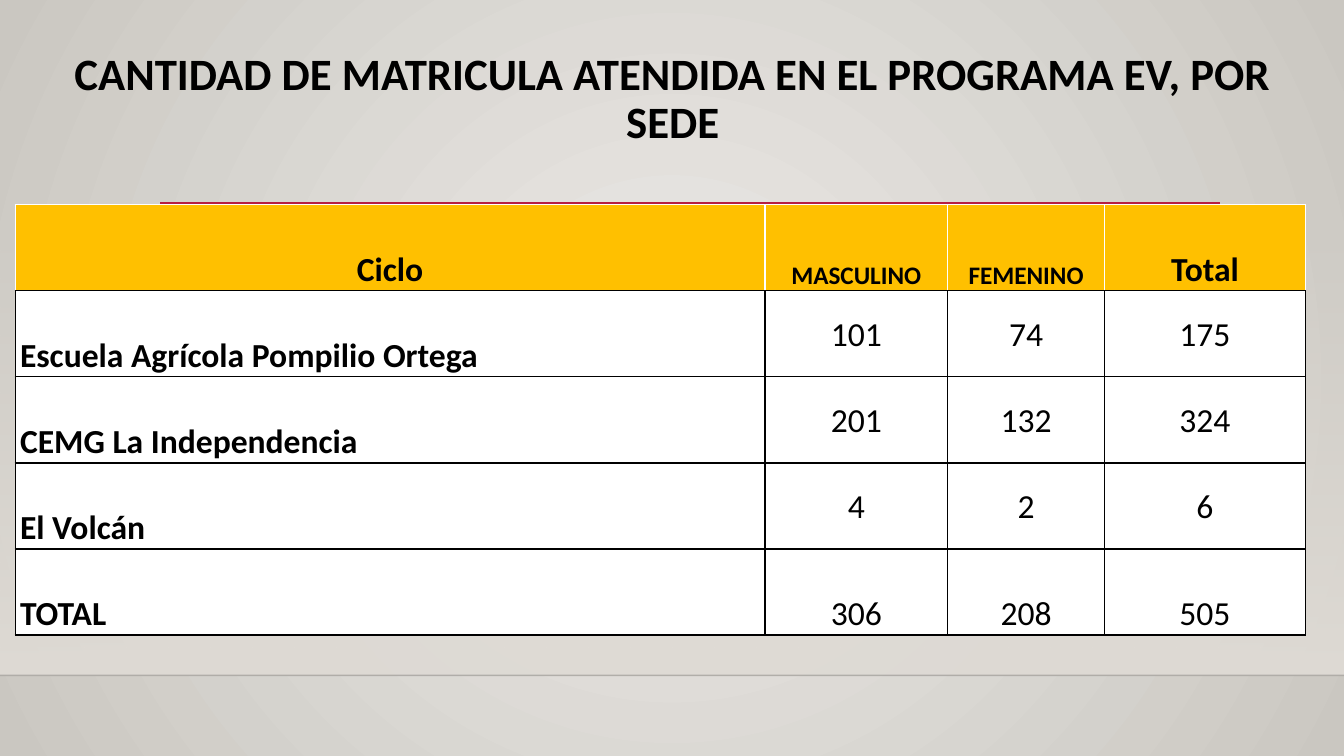
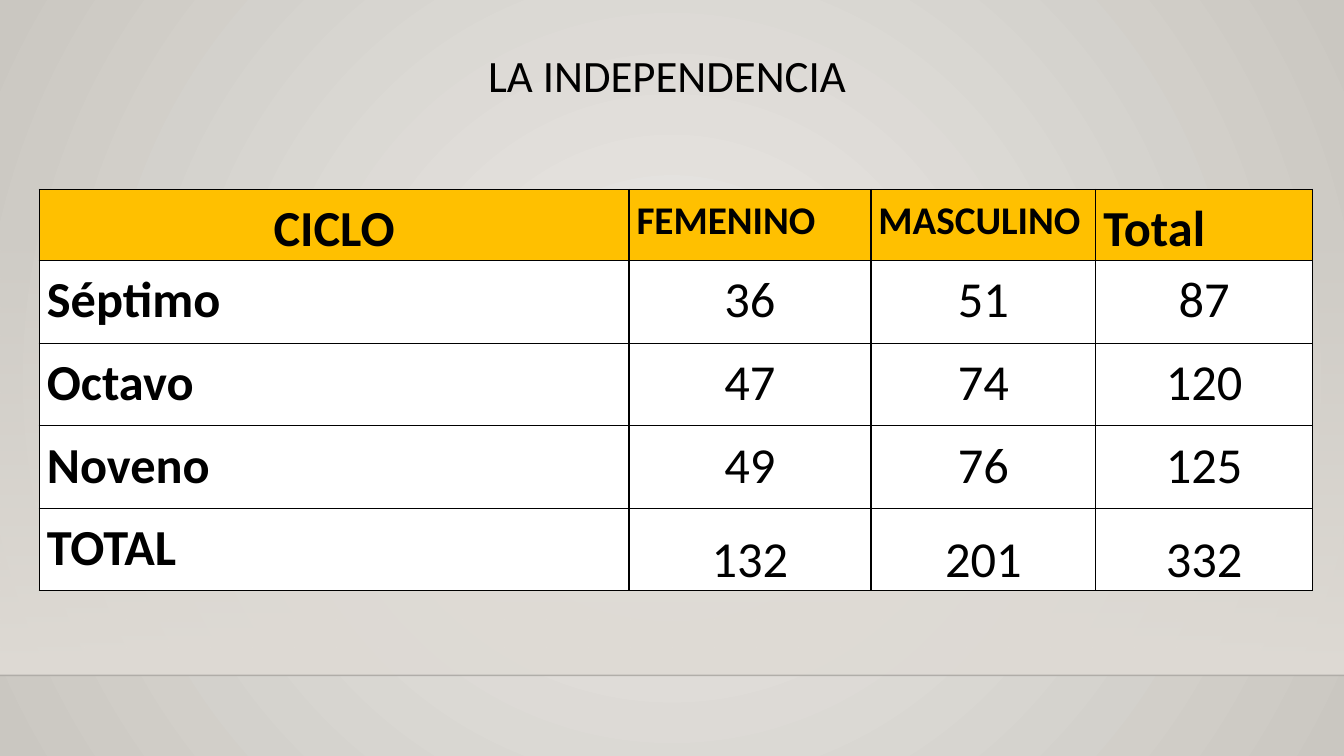
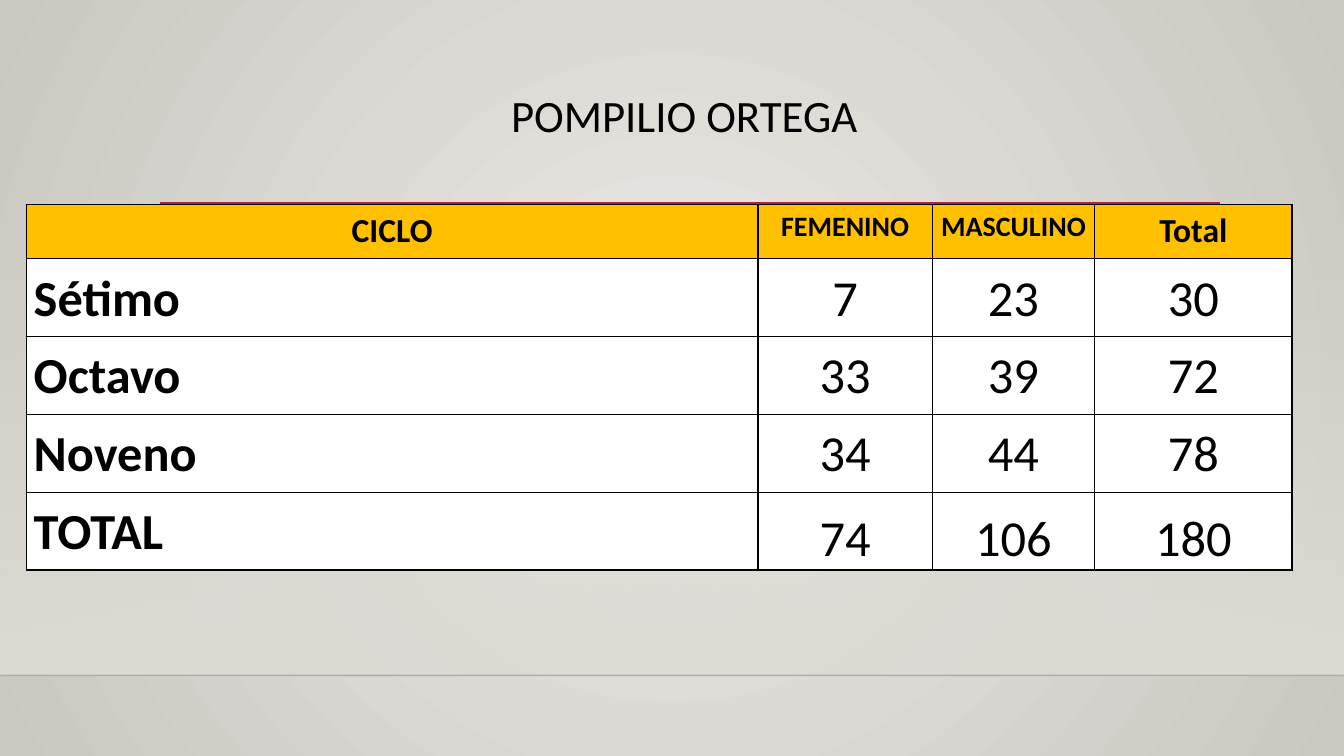
from lxml.etree import SubElement
from pptx import Presentation
from pptx.dml.color import RGBColor
from pptx.enum.shapes import MSO_CONNECTOR, MSO_SHAPE
from pptx.enum.text import MSO_ANCHOR, MSO_AUTO_SIZE, PP_ALIGN
from pptx.oxml.ns import qn
from pptx.util import Pt

HUES = {
    "black": "000000",
    "white": "FFFFFF",
    "gold": "FFC000",
    "red": "B71E42",
    "sand": "DFDBD5",
    "light": "ECEAE7",
    "dark": "CAC7C1",
}
WIDE, HIGH = 960, 540
TOP, MID, LOW = MSO_ANCHOR.TOP, MSO_ANCHOR.MIDDLE, MSO_ANCHOR.BOTTOM
LEFT, CENTER = PP_ALIGN.JUSTIFY, PP_ALIGN.CENTER


class Deck:
    font = "Calibri"

    def __init__(self):
        self.show = Presentation()
        self.show.slide_width = Pt(WIDE)
        self.show.slide_height = Pt(HIGH)
        self.plan = self.show.slide_layouts[5]
        self.slide = None
        self.paint_back()

    def hue(self, name):
        return RGBColor.from_string(HUES[name])

    def fade(self, color, share):
        tag = color.find(".//" + qn("a:srgbClr"))
        SubElement(tag, qn("a:alpha"), val=str(share * 1000))

    def blend(self, fill, first, last):
        fill.gradient()
        for stop, name in zip(fill.gradient_stops, (first, last)):
            stop.color.rgb = self.hue(name)

    def paint_back(self):
        master = self.show.slide_master
        self.blend(master.background.fill, "light", "dark")
        angle = master.element.xpath(".//p:bg//a:lin")[0]
        grad = angle.getparent()
        grad.remove(angle)
        ring = SubElement(grad, qn("a:path"), path="circle")
        SubElement(ring, qn("a:fillToRect"), {side: "50000" for side in "ltrb"})

    def add(self):
        fresh = self.slide is None
        self.slide = self.show.slides.add_slide(self.plan)
        if fresh:
            self.dress()

    def dress(self):
        parts = [
            self.band(159, 323.4),
            self.rule(0, WIDE, 482.4, "black", 1, 20),
            self.rule(114.5, 871.2, 145.5, "red", 2.5),
        ]
        tree = self.plan.shapes.element
        for num, part in enumerate(parts, 20):
            part.element.xpath(".//p:cNvPr")[0].set("id", str(num))
            tree.append(part.element)

    def band(self, top, high):
        box = self.slide.shapes.add_shape(
            MSO_SHAPE.RECTANGLE, 0, Pt(top), Pt(WIDE), Pt(high))
        box.shadow.inherit = False
        box.line.fill.background()
        self.blend(box.fill, "sand", "sand")
        box.fill.gradient_angle = 270
        self.fade(box.element.xpath(".//a:gs")[0], 0)
        return box

    def rule(self, start, end, top, name, thick, share=100):
        line = self.slide.shapes.add_connector(
            MSO_CONNECTOR.STRAIGHT, Pt(start), Pt(top), Pt(end), Pt(top))
        line.line.color.rgb = self.hue(name)
        line.line.width = Pt(thick)
        if share < 100:
            self.fade(line.element.spPr, share)
        SubElement(line.element.spPr, qn("a:effectLst"))
        return line

    def style(self, para, size, bold, align, space):
        para.alignment = align
        para.line_spacing = space
        para.font.name = self.font
        para.font.size = Pt(size)
        para.font.bold = bold
        para.font.color.rgb = self.hue("black")

    def title(self, text, left, top, wide, bold=False):
        head = self.slide.shapes.title
        head.left, head.top = Pt(left), Pt(top)
        head.width, head.height = Pt(wide), Pt(82.8)
        frame = head.text_frame
        frame.text = text
        frame.word_wrap = True
        frame.auto_size = MSO_AUTO_SIZE.NONE
        frame.vertical_anchor = TOP
        self.style(frame.paragraphs[0], 32, bold, CENTER, 0.9)

    def edge(self, cell, names):
        props = cell._tc.get_or_add_tcPr()
        for side, name in zip("LRTB", names):
            line = SubElement(props, qn("a:ln" + side), w=str(Pt(1)))
            fill = SubElement(line, qn("a:solidFill"))
            SubElement(fill, qn("a:srgbClr"), val=HUES[name])

    def cell(self, cell, text, fill, edges, pad, anchor, font):
        self.edge(cell, edges)
        cell.fill.solid()
        cell.fill.fore_color.rgb = self.hue(fill)
        cell.margin_left = cell.margin_right = Pt(pad)
        cell.margin_top = cell.margin_bottom = 0
        cell.vertical_anchor = anchor
        cell.text = text
        self.style(cell.text_frame.paragraphs[0], *font)

    def table(self, rows, left, top, cols, highs, heads, size, pad=5.4,
              space=1.15, anchors=(TOP, TOP), align=CENTER, rim="black"):
        sizes = [highs[0]] + [highs[1]] * (len(rows) - 1)
        grid = self.slide.shapes.add_table(
            len(rows), len(cols), Pt(left), Pt(top),
            Pt(sum(cols)), Pt(sum(sizes))).table
        grid.first_row = grid.horz_banding = False
        for col, wide in zip(grid.columns, cols):
            col.width = Pt(wide)
        for row, high in zip(grid.rows, sizes):
            row.height = Pt(high)
        side, inner = anchors
        final = len(rows) - 1
        for r, row in enumerate(rows):
            for c, text in enumerate(row):
                fill, edges, anchor = "white", ["black"] * 4, side
                if r == 0:
                    fill, edges = "gold", [rim] * 3 + ["black"]
                    where = align if c else CENTER
                    font = heads[c in (1, 2)], True, where, space
                elif c == 0:
                    font = size, True, LEFT, space
                else:
                    anchor = LOW if r == final else inner
                    gap = 1.07 if r == final else space
                    font = size, False, CENTER, gap
                if r == 1:
                    edges[2] = "black"
                self.cell(grid.cell(r, c), text, fill, edges, pad, anchor, font)


def main():
    deck = Deck()

    deck.add()
    deck.title("CANTIDAD DE MATRICULA ATENDIDA EN EL PROGRAMA EV, POR SEDE",
               28.8, 33.1, 903.6, True)
    deck.table([
        ("Ciclo", "MASCULINO", "FEMENINO", "Total"),
        ("Escuela Agrícola Pompilio Ortega", "101", "74", "175"),
        ("CEMG La Independencia", "201", "132", "324"),
        ("El Volcán", "4", "2", "6"),
        ("TOTAL", "306", "208", "505"),
    ], 10.8, 146.2, (535.7, 130.3, 112.3, 143.3), (61.5, 61.5), (24, 18), 24,
        pad=3.5, space=1.07, anchors=(LOW, MID), rim="white")

    deck.add()
    deck.title("LA INDEPENDENCIA ", 102.2, 34.6, 756)
    deck.table([
        ("CICLO", "FEMENINO", "MASCULINO", "Total"),
        ("Séptimo", "36", "51", "87"),
        ("Octavo", "47", "74", "120"),
        ("Noveno", "49", "76", "125"),
        ("TOTAL", "132", "201", "332"),
    ], 28.1, 135.4, (421.2, 172.8, 160.6, 154.8), (44, 59), (36, 28), 36,
        align=LEFT)

    deck.add()
    deck.title("POMPILIO ORTEGA ", 114.5, 63.4, 756)
    deck.table([
        ("CICLO", "FEMENINO", "MASCULINO", "Total"),
        ("Sétimo", "7", "23", "30"),
        ("Octavo", "33", "39", "72"),
        ("Noveno", "34", "44", "78"),
        ("TOTAL", "74", "106", "180"),
    ], 18.7, 146.2, (522.7, 124.6, 115.9, 141.1), (38.6, 55.6), (24, 20), 36)

    deck.show.save("out.pptx")


if __name__ == "__main__":
    main()
